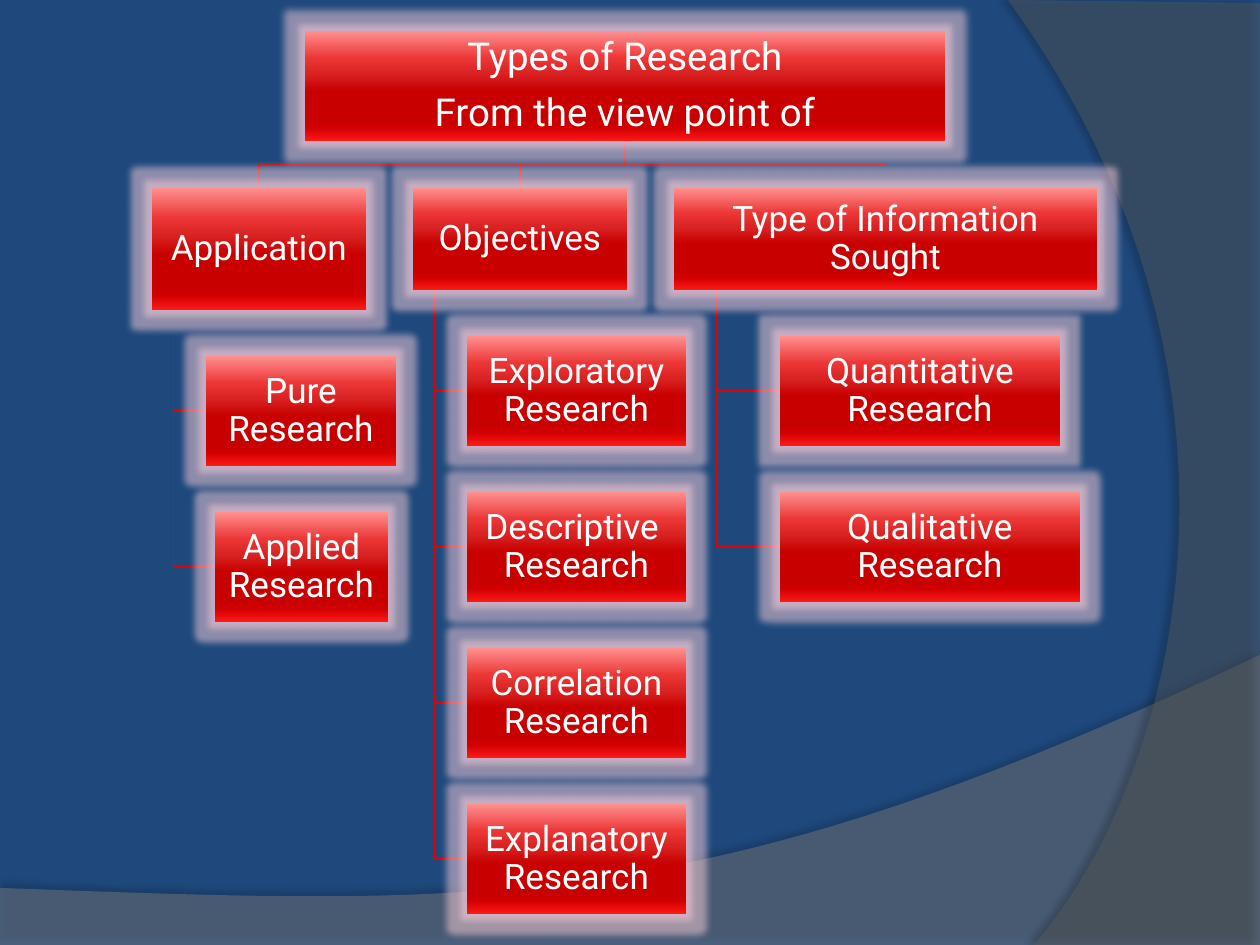
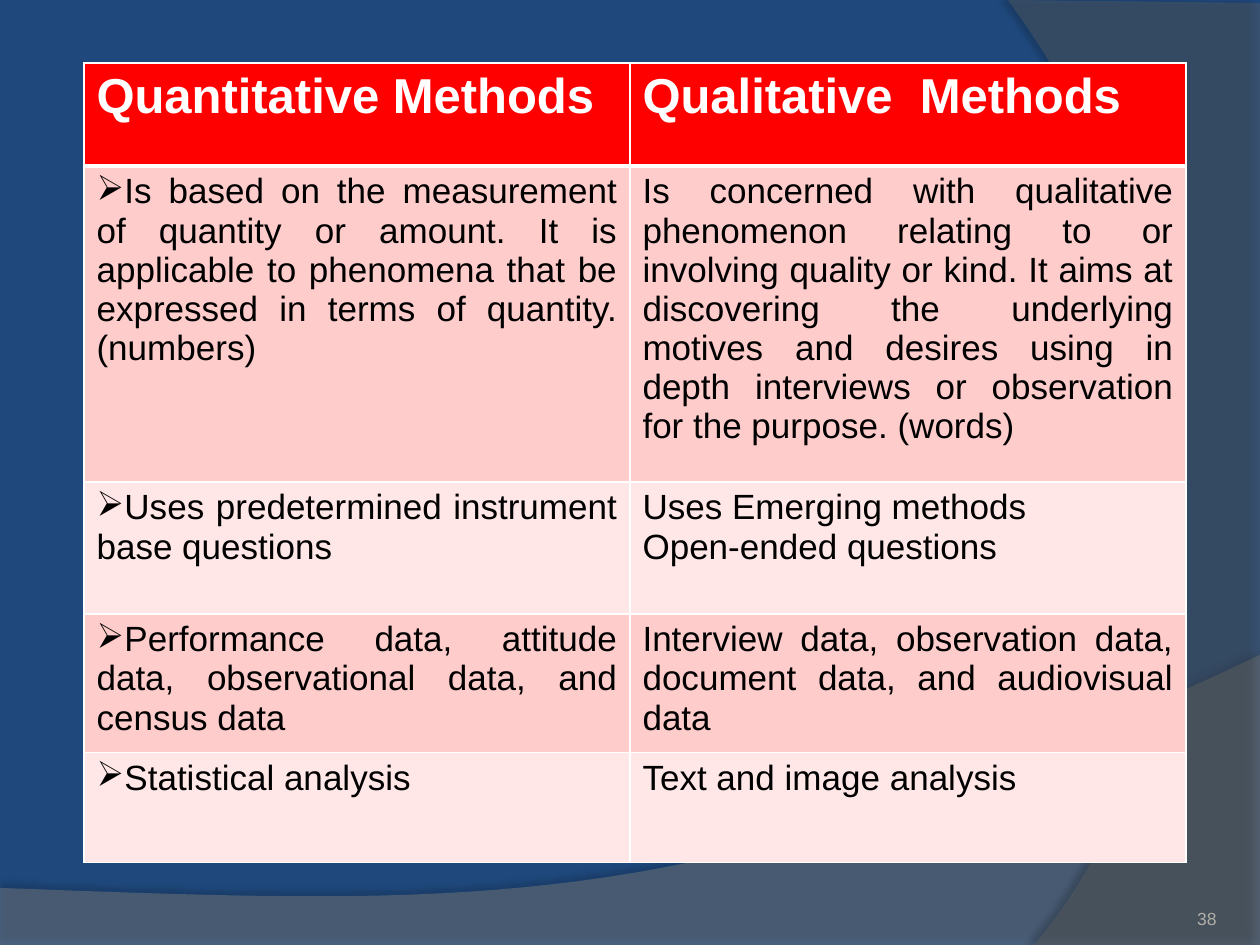
from collections import namedtuple

from lxml import etree
from pptx import Presentation
from pptx.dml.color import RGBColor
from pptx.enum.shapes import MSO_SHAPE as Preset
from pptx.enum.text import MSO_ANCHOR as Anchor, PP_ALIGN as Align
from pptx.oxml.ns import qn
from pptx.util import Pt

EMU_PER_PX = 914400 / 126

COLORS = {
    "background": "1F497D",
    "bottom band": "7F7F7F",
    "side band": "5E5E5E",
    "shadow": "000000",
    "glow": "FFD1DB",
    "branch": "CC0000",
    "twig": "E70000",
    "white": "FFFFFF",
    "text": "000000",
    "number": "B0AFA6",
    "header": "FF0000",
    "odd row": "FFCCCC",
    "even row": "FFE7E7",
}
BOX_GRADIENT = {0: "FF9090", 25: "EC3535", 38: "DA2323", 55: "C80000",
                80: "C60000", 88: "D10000", 100: "FF1818"}

Box = namedtuple("Box", "text left top width height")


def px(length):
    return round(length * EMU_PER_PX)


def rgb(name):
    return RGBColor.from_string(COLORS[name])


def add_element(parent, tag, **attributes):
    return etree.SubElement(parent, qn(tag), {key: str(value) for key, value in attributes.items()})


def add_color(parent, value, alpha=100):
    color = add_element(parent, "a:srgbClr", val=value)
    if alpha < 100:
        add_element(color, "a:alpha", val=alpha * 1000)


def bezier(start, control_1, control_2, end, steps=40):
    def blend(t, a, b, c, d):
        u = 1 - t
        return u**3 * a + 3 * u * u * t * b + 3 * u * t * t * c + t**3 * d

    return [tuple(blend(step / steps, *axis) for axis in zip(start, control_1, control_2, end))
            for step in range(steps + 1)]


class Deck:
    def __init__(self):
        self.presentation = Presentation()
        self.presentation.slide_width = px(1260)
        self.presentation.slide_height = px(945)
        self.slide = None

    def new_slide(self):
        self.slide = self.presentation.slides.add_slide(self.presentation.slide_layouts[6])
        fill = self.slide.background.fill
        fill.solid()
        fill.fore_color.rgb = rgb("background")
        bottom = bezier((1260, 655), (704, 919), (493, 906), (0, 888))
        side = bezier((1034, 945), (1178, 780), (1283, 378), (1008, 0))
        self.band([(0, 946), (1260, 946)] + bottom, "bottom band", 45, 35, Pt(3.5), 270)
        self.band([(1260, 3), (1260, 945)] + side, "side band", 40, 45, Pt(4), 180)

    def freeform(self, points, close):
        start, *rest = [(px(x), px(y)) for x, y in points]
        builder = self.slide.shapes.build_freeform(*start)
        builder.add_line_segments(rest, close=close)
        shape = builder.convert_to_shape()
        shape.shadow.inherit = False
        return shape

    def band(self, points, color, alpha, shadow_alpha, distance, direction):
        shape = self.freeform(points, True)
        shape.line.fill.background()
        shape.fill.solid()
        shape.fill.fore_color.rgb = rgb(color)
        properties = shape.element.spPr
        fill_color = properties.find(qn("a:solidFill")).find(qn("a:srgbClr"))
        add_element(fill_color, "a:alpha", val=alpha * 1000)
        shadow = add_element(properties.find(qn("a:effectLst")), "a:outerShdw", blurRad=Pt(4),
                             dist=distance, dir=direction * 60000, algn="ctr", rotWithShape=0)
        add_color(shadow, COLORS["shadow"], shadow_alpha)

    def elbow(self, points, color):
        shape = self.freeform(points, False)
        shape.fill.background()
        shape.line.color.rgb = rgb(color)
        shape.line.width = Pt(0.75)

    def set_text(self, frame, text, size, color, align, font="Arial", bold=False,
                 bullet=None, line_spacing=None, gap=None):
        frame.text = text
        frame.word_wrap = True
        for index, paragraph in enumerate(frame.paragraphs):
            paragraph.alignment = align
            if line_spacing:
                paragraph.line_spacing = line_spacing
            if gap and index:
                paragraph.space_before = Pt(gap)
            if bullet:
                add_element(paragraph._p.get_or_add_pPr(), "a:buChar", char=bullet)
            paragraph.font.name = font
            paragraph.font.size = Pt(size)
            paragraph.font.bold = bold
            paragraph.font.color.rgb = rgb(color)

    def box(self, box, size=20, margin=1):
        shape = self.slide.shapes.add_shape(Preset.RECTANGLE, *map(px, box[1:]))
        shape.line.fill.background()
        shape.shadow.inherit = False
        shape.fill.gradient()
        shape.fill.gradient_angle = 270
        properties = shape.element.spPr
        stops = properties.find(qn("a:gradFill")).find(qn("a:gsLst"))
        for stop in list(stops):
            stops.remove(stop)
        for position, color in BOX_GRADIENT.items():
            add_color(add_element(stops, "a:gs", pos=position * 1000), color)
        glow = add_element(properties.find(qn("a:effectLst")), "a:glow", rad=Pt(8))
        add_color(glow, COLORS["glow"], 50)
        frame = shape.text_frame
        frame.margin_left = frame.margin_right = px(margin)
        frame.margin_top = frame.margin_bottom = px(margin)
        frame.vertical_anchor = Anchor.MIDDLE
        self.set_text(frame, box.text, size, "white", Align.CENTER, "Roboto",
                      line_spacing=0.9, gap=8)

    def page_number(self, number):
        shape = self.slide.shapes.add_textbox(px(1124), px(885), px(105), px(50))
        shape.text_frame.vertical_anchor = Anchor.BOTTOM
        self.set_text(shape.text_frame, str(number), 10, "number", Align.RIGHT)

    def cell(self, cell, text, fill, bottom_border=1, **style):
        properties = cell._tc.get_or_add_tcPr()
        for side, width in (("L", 1), ("R", 1), ("T", 1), ("B", bottom_border)):
            border = add_element(properties, f"a:ln{side}", w=Pt(width))
            add_color(add_element(border, "a:solidFill"), COLORS["white"])
        cell.fill.solid()
        cell.fill.fore_color.rgb = rgb(fill)
        self.set_text(cell.text_frame, text, **style)

    def table(self, left, top, widths, heights, rows):
        table = self.slide.shapes.add_table(len(heights), len(widths), px(left), px(top),
                                            px(sum(widths)), px(sum(heights))).table
        table.horz_banding = False
        for column, width in zip(table.columns, widths):
            column.width = px(width)
        for row, height in zip(table.rows, heights):
            row.height = px(height)
        for row_index, texts in enumerate(rows):
            for column_index, text in enumerate(texts):
                cell = table.cell(row_index, column_index)
                if row_index == 0:
                    self.cell(cell, text, "header", 3, size=28, color="white",
                              align=Align.LEFT, bold=True)
                else:
                    self.cell(cell, text, "odd row" if row_index % 2 else "even row",
                              size=20, color="text", align=Align.JUSTIFY,
                              bullet=None if column_index else "➢")


def children_of(parent, children):
    first_top = parent.top + parent.height + 46
    return [Box(text, left, first_top + index * 156, width, 110)
            for index, (text, left, width) in enumerate(children)]


def research_types(deck):
    deck.new_slide()
    title = Box("Types of Research\nFrom the view point of", 305, 31, 640, 110)
    objectives = ["Exploratory", "Descriptive ", "Correlation", "Explanatory"]
    branches = [
        (Box("Application", 152, 188, 214, 122),
         [("Pure Research", 206, 190), ("Applied Research", 215, 173)]),
        (Box("Objectives", 413, 188, 214, 102),
         [(f"{kind} Research", 467, 219) for kind in objectives]),
        (Box("Type of Information Sought", 674, 188, 423, 102),
         [("Quantitative Research", 780, 280), ("Qualitative Research", 780, 300)]),
    ]
    tree = [(parent, children_of(parent, children)) for parent, children in branches]

    title_center = title.left + title.width / 2
    title_bottom = title.top + title.height
    for parent, children in tree:
        center = parent.left + parent.width / 2
        middle = (title_bottom + parent.top) / 2
        deck.elbow([(title_center, title_bottom), (title_center, middle),
                    (center, middle), (center, parent.top)], "branch")
        trunk = parent.left + parent.width / 10
        for child in children:
            child_middle = child.top + child.height / 2
            deck.elbow([(trunk, parent.top + parent.height), (trunk, child_middle),
                        (child.left, child_middle)], "twig")

    deck.box(title, size=22, margin=2)
    for parent, children in tree:
        for box in [parent] + children:
            deck.box(box)


def methods_comparison(deck):
    deck.new_slide()
    deck.page_number(38)
    deck.table(84, 63, [546, 556], [103, 316, 132, 125, 110], [
        ("Quantitative Methods", "Qualitative  Methods"),
        ("Is based on the measurement of quantity or amount. It is applicable to phenomena "
         "that be expressed in terms of quantity. (numbers)",
         "Is concerned with qualitative phenomenon relating to or involving quality or kind. "
         "It aims at discovering the underlying motives and desires using in depth interviews "
         "or observation for the purpose. (words)"),
        ("Uses predetermined instrument base questions",
         "Uses Emerging methods\nOpen-ended questions"),
        ("Performance data, attitude data, observational data, and census data",
         "Interview data, observation data, document data, and audiovisual data"),
        ("Statistical analysis", "Text and image analysis"),
    ])


def main():
    deck = Deck()
    research_types(deck)
    methods_comparison(deck)
    deck.presentation.save("out.pptx")


if __name__ == "__main__":
    main()
